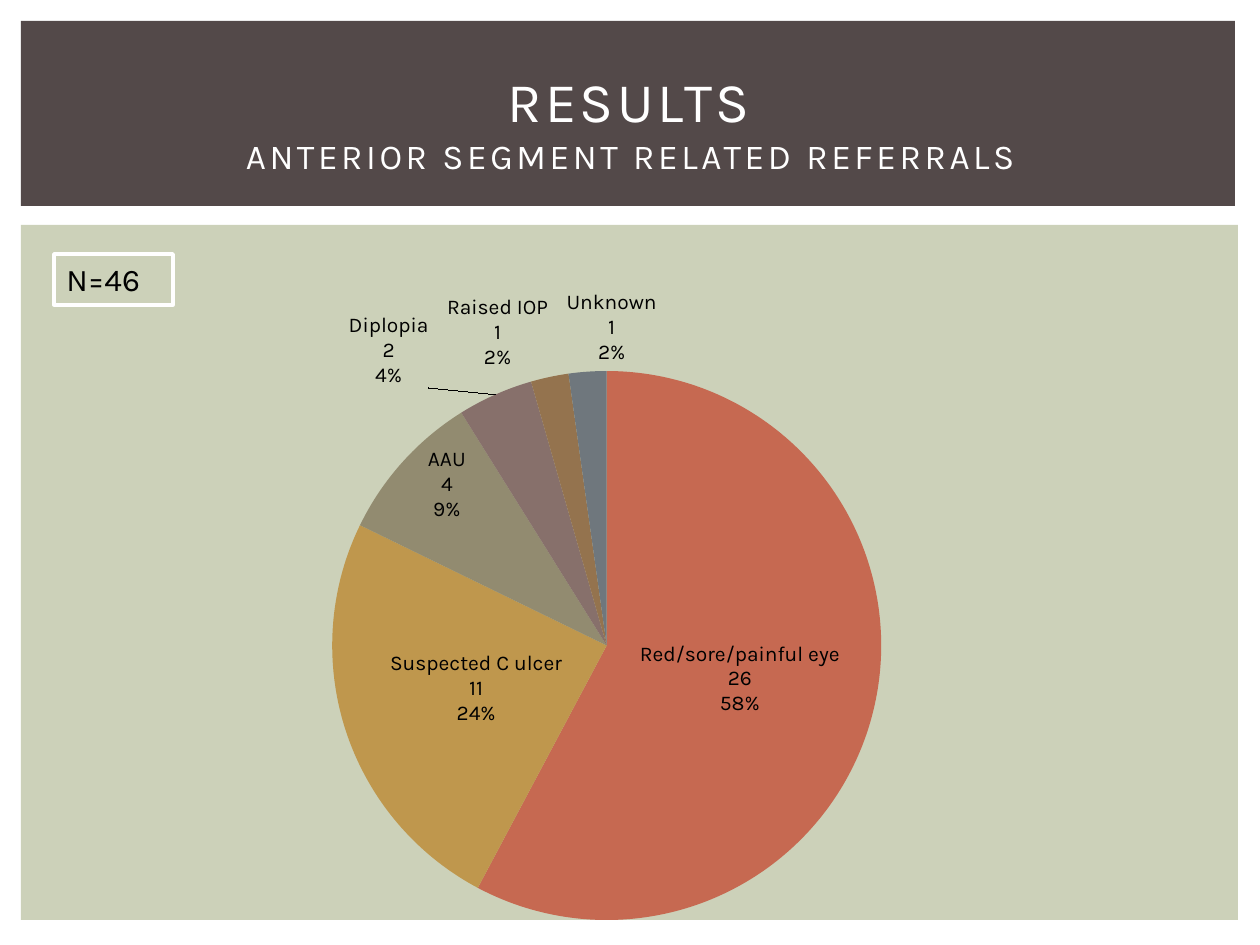
from typing import NamedTuple

from lxml import etree
from pptx import Presentation, util as u
from pptx.chart import data as cd
from pptx.dml import color
from pptx.enum import chart as ce, shapes, text
from pptx.oxml import ns

SCALE = 914400 / 126
FONT = "Karla"


class Box(NamedTuple):
    """A rectangle in px."""
    x: int
    y: int
    w: int
    h: int


class Slice(NamedTuple):
    """One slice of the pie."""
    name: str
    count: int
    fill: str
    inside: bool = False


class Line(NamedTuple):
    """One line of the title."""
    words: str
    size: int


PANELS = [(Box(21, 225, 1217, 695), "CCD1B9"), (Box(21, 21, 1214, 185), "534949")]
TITLE = [Line("RESULTS", 32), Line("ANTERIOR SEGMENT RELATED REFERRALS", 20)]
SLICES = [
    Slice("Red/sore/painful eye", 26, "C66951", True),
    Slice("Suspected C ulcer", 11, "BF974D", True),
    Slice("AAU", 4, "928B70"),
    Slice("Diplopia", 2, "87706B"),
    Slice("Raised IOP", 1, "94734E"),
    Slice("Unknown", 1, "6F777D"),
]
CHART = Box(144, 234, 921, 741)
PIE = Box(332, 371, 550, 549)


def px(n: int) -> int:
    """Turn px into EMU."""
    return round(n * SCALE)


def place(box: Box) -> list[int]:
    """Turn a box into EMU lengths."""
    return [px(n) for n in box]


def rgb(code: str) -> color.RGBColor:
    """Read a hex colour."""
    return color.RGBColor.from_string(code)


def style(font, size: int | None, code: str) -> None:
    """Set face, size and colour of a font."""
    font.name = FONT
    font.color.rgb = rgb(code)
    if size:
        font.size = u.Pt(size)


def panel(slide, box: Box, fill: str) -> None:
    """Draw a plain filled rectangle."""
    shape = slide.shapes.add_shape(shapes.MSO_SHAPE.RECTANGLE, *place(box))
    shape.shadow.inherit = False
    shape.fill.solid()
    shape.fill.fore_color.rgb = rgb(fill)
    shape.line.fill.background()


def title(slide, box: Box, lines: list[Line]) -> None:
    """Write the spaced title lines."""
    frame = slide.shapes.add_textbox(*place(box)).text_frame
    frame.word_wrap = True
    frame.vertical_anchor = text.MSO_ANCHOR.MIDDLE
    para = frame.paragraphs[0]
    para.alignment = text.PP_ALIGN.CENTER
    style(para.font, None, "FFFFFF")
    for i, line in enumerate(lines):
        if i:
            para.add_line_break()
        run = para.add_run()
        run.text = line.words
        run.font.size = u.Pt(line.size)
        run._r.get_or_add_rPr().set("spc", "200")


def badge(slide, box: Box, words: str) -> None:
    """Draw the outlined sample size."""
    shape = slide.shapes.add_textbox(*place(box))
    shape.line.color.rgb = rgb("FFFFFF")
    shape.line.width = u.Pt(2)
    shape.text_frame.word_wrap = True
    para = shape.text_frame.paragraphs[0]
    para.text = words
    style(para.font, 18, "000000")


def layout(chart, box: Box, pie: Box) -> None:
    """Fix the plot area inside the chart."""
    area = chart._chartSpace.chart.plotArea
    for old in area.findall(ns.qn("c:layout")):
        area.remove(old)
    outer = etree.Element(ns.qn("c:layout"))
    inner = etree.SubElement(outer, ns.qn("c:manualLayout"))
    rules = {
        "layoutTarget": "inner", "xMode": "edge", "yMode": "edge",
        "x": round((pie.x - box.x) / box.w, 3),
        "y": round((pie.y - box.y) / box.h, 3),
        "w": round(pie.w / box.w, 3),
        "h": round(pie.h / box.h, 3),
    }
    for tag, val in rules.items():
        etree.SubElement(inner, ns.qn(f"c:{tag}")).set("val", str(val))
    area.insert(0, outer)


def labels(series, parts: list[Slice]) -> None:
    """Show name, count and share on separate lines."""
    tags = series.data_labels
    tags.show_value = tags.show_percentage = tags.show_category_name = True
    tags.position = ce.XL_LABEL_POSITION.BEST_FIT
    style(tags.font, 12, "000000")
    for i, part in enumerate(parts):
        if part.inside:
            tag = series.points[i].data_label
            style(tag.font, 12, "000000")
            tag.position = ce.XL_LABEL_POSITION.CENTER
    root = series._element
    for flag in root.xpath(".//c:showCatName | .//c:showPercent"):
        flag.set("val", "1")
    for flag in root.xpath(".//c:showBubbleSize"):
        gap = etree.Element(ns.qn("c:separator"))
        gap.text = "\n"
        flag.addnext(gap)


def pie(slide, box: Box, parts: list[Slice]) -> None:
    """Draw the pie chart."""
    data = cd.CategoryChartData()
    data.categories = [p.name for p in parts]
    data.add_series("Series 1", [p.count for p in parts])
    chart = slide.shapes.add_chart(ce.XL_CHART_TYPE.PIE, *place(box), data).chart
    chart.has_legend = False
    chart.has_title = False
    style(chart.font, 10, "000000")
    plot = chart.plots[0]
    plot.vary_by_categories = True
    series = plot.series[0]
    for i, part in enumerate(parts):
        form = series.points[i].format
        form.fill.solid()
        form.fill.fore_color.rgb = rgb(part.fill)
        form.line.fill.background()
    labels(series, parts)
    layout(chart, box, PIE)


def main() -> None:
    """Build and save the slide."""
    deck = Presentation()
    deck.slide_width, deck.slide_height = px(1260), px(945)
    slide = deck.slides.add_slide(deck.slide_layouts[6])
    for box, fill in PANELS:
        panel(slide, box, fill)
    title(slide, Box(53, 49, 1155, 145), TITLE)
    pie(slide, CHART, SLICES)
    badge(slide, Box(54, 254, 119, 51), "N=46")
    deck.save("out.pptx")


if __name__ == "__main__":
    main()
